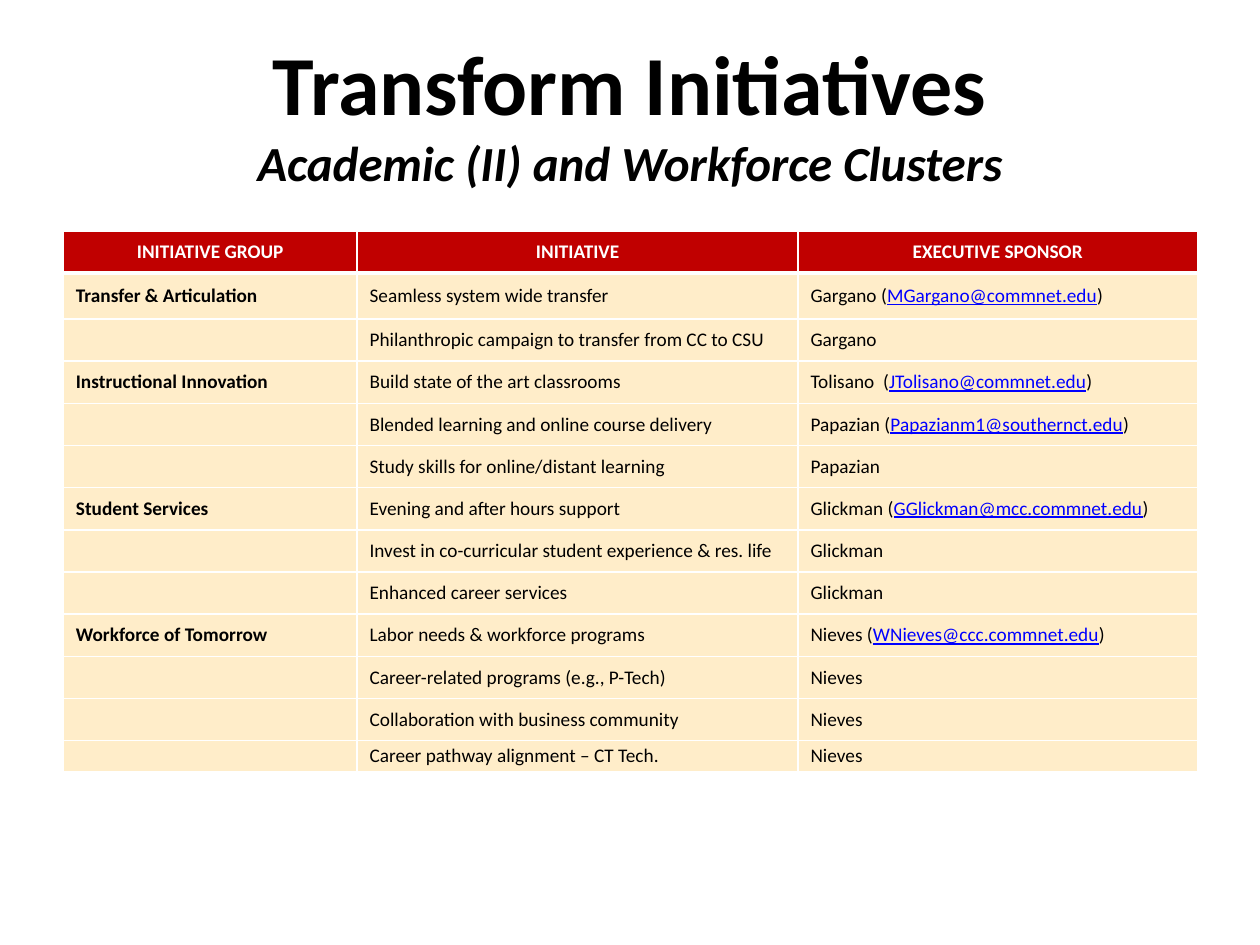
from pptx import Presentation
from pptx.dml.color import RGBColor
from pptx.enum.text import MSO_ANCHOR as Anchor, PP_ALIGN as Align
from pptx.oxml.ns import qn
from pptx.util import Cm, Pt
from lxml.etree import SubElement

BLACK, WHITE, RED, CREAM, BLUE = "000000", "FFFFFF", "C00000", "FFEDC9", "0000FF"
FONT = "Calibri"
BODY_SIZE = 11

COLUMN_WIDTHS = [5.92, 8.89, 8.05]
HEADER_HEIGHT, FIRST_HEIGHT, ROW_HEIGHT, LAST_HEIGHT = 0.84, 0.93, 0.85, 0.62
HEADINGS = ["INITIATIVE GROUP", "INITIATIVE", "EXECUTIVE SPONSOR"]

# Group, initiative, sponsor, e-mail address
INITIATIVES = [
    ("Transfer & Articulation", "Seamless system wide transfer", "Gargano (", "MGargano@commnet.edu"),
    ("", "Philanthropic campaign to transfer from CC to CSU", "Gargano", ""),
    ("Instructional Innovation", "Build state of the art classrooms", "Tolisano  (", "JTolisano@commnet.edu"),
    ("", "Blended learning and online course delivery", "Papazian (", "Papazianm1@southernct.edu"),
    ("", "Study skills for online/distant learning", "Papazian", ""),
    ("Student Services", "Evening and after hours support", "Glickman (", "GGlickman@mcc.commnet.edu"),
    ("", "Invest in co-curricular student experience & res. life", "Glickman", ""),
    ("", "Enhanced career services", "Glickman", ""),
    ("Workforce of Tomorrow", "Labor needs & workforce programs", "Nieves (", "WNieves@ccc.commnet.edu"),
    ("", "Career-related programs (e.g., P-Tech)", "Nieves", ""),
    ("", "Collaboration with business community", "Nieves", ""),
    ("", "Career pathway alignment – CT Tech.", "Nieves", ""),
]


def color(hex_string):
    return RGBColor.from_string(hex_string)


def add_text(paragraph, text, size=BODY_SIZE, fill=BLACK, bold=False, italic=False, underline=False):
    run = paragraph.add_run()
    run.text = text
    font = run.font
    font.name, font.size = FONT, Pt(size)
    font.bold, font.italic, font.underline = bold, italic, underline
    font.color.rgb = color(fill)


def set_borders(cell, bottom_width=1):
    properties = cell._tc.get_or_add_tcPr()
    widths = {"a:lnL": 1, "a:lnR": 1, "a:lnT": 1, "a:lnB": bottom_width}
    for position, (tag, width) in enumerate(widths.items()):
        line = SubElement(properties, qn(tag), w=str(Pt(width)))
        fill = SubElement(line, qn("a:solidFill"))
        SubElement(fill, qn("a:srgbClr"), val=WHITE)
        # Borders come before the cell fill
        properties.insert(position, line)


def format_cell(cell, fill, left_margin, bottom_width=1):
    cell.fill.solid()
    cell.fill.fore_color.rgb = color(fill)
    cell.vertical_anchor = Anchor.MIDDLE
    cell.margin_left, cell.margin_right = Cm(left_margin), Cm(0.03)
    cell.margin_top = cell.margin_bottom = 0
    set_borders(cell, bottom_width)
    return cell.text_frame.paragraphs[0]


def add_title(slide):
    shape = slide.shapes.add_textbox(0, Cm(0.64), Cm(25.4), Cm(3.25))
    frame = shape.text_frame
    frame.word_wrap = True
    frame.margin_left = frame.margin_right = frame.margin_top = frame.margin_bottom = 0
    paragraph = frame.paragraphs[0]
    paragraph.alignment = Align.CENTER
    add_text(paragraph, "Transform Initiatives", size=48, bold=True)
    paragraph.add_line_break()
    add_text(paragraph, "Academic (II) and Workforce Clusters", size=28, bold=True, italic=True)


def fill_row(table, row, group, initiative, sponsor, email):
    paragraphs = [format_cell(table.cell(row, column), CREAM, 0.25) for column in range(3)]
    if group:
        add_text(paragraphs[0], group, bold=True)
    else:
        # Keeps the empty cell from growing to the default text size
        SubElement(paragraphs[0]._p, qn("a:endParaRPr"), sz=str(BODY_SIZE * 100))
    add_text(paragraphs[1], initiative)
    add_text(paragraphs[2], sponsor)
    if email:
        add_text(paragraphs[2], email, fill=BLUE, underline=True)
        add_text(paragraphs[2], ")")


def add_initiative_table(slide):
    middle = [ROW_HEIGHT] * (len(INITIATIVES) - 2)
    heights = [HEADER_HEIGHT, FIRST_HEIGHT, *middle, LAST_HEIGHT]
    table = slide.shapes.add_table(
        len(heights), len(COLUMN_WIDTHS), Cm(1.28), Cm(4.66),
        Cm(sum(COLUMN_WIDTHS)), Cm(sum(heights))).table
    for column, width in zip(table.columns, COLUMN_WIDTHS):
        column.width = Cm(width)
    for row, height in zip(table.rows, heights):
        row.height = Cm(height)

    # Header row
    for column, heading in enumerate(HEADINGS):
        paragraph = format_cell(table.cell(0, column), RED, 0.03, bottom_width=3)
        paragraph.alignment = Align.CENTER
        add_text(paragraph, heading, fill=WHITE, bold=True)

    # Initiatives
    for row, entry in enumerate(INITIATIVES, start=1):
        fill_row(table, row, *entry)
    # The first row shares the thick line under the header
    for column in range(len(HEADINGS)):
        table.cell(1, column)._tc.tcPr.find(qn("a:lnT")).set("w", str(Pt(3)))


def main():
    presentation = Presentation()
    presentation.slide_width, presentation.slide_height = Cm(25.4), Cm(19.05)
    slide = presentation.slides.add_slide(presentation.slide_layouts[6])
    add_title(slide)
    add_initiative_table(slide)
    presentation.save("out.pptx")


if __name__ == "__main__":
    main()
